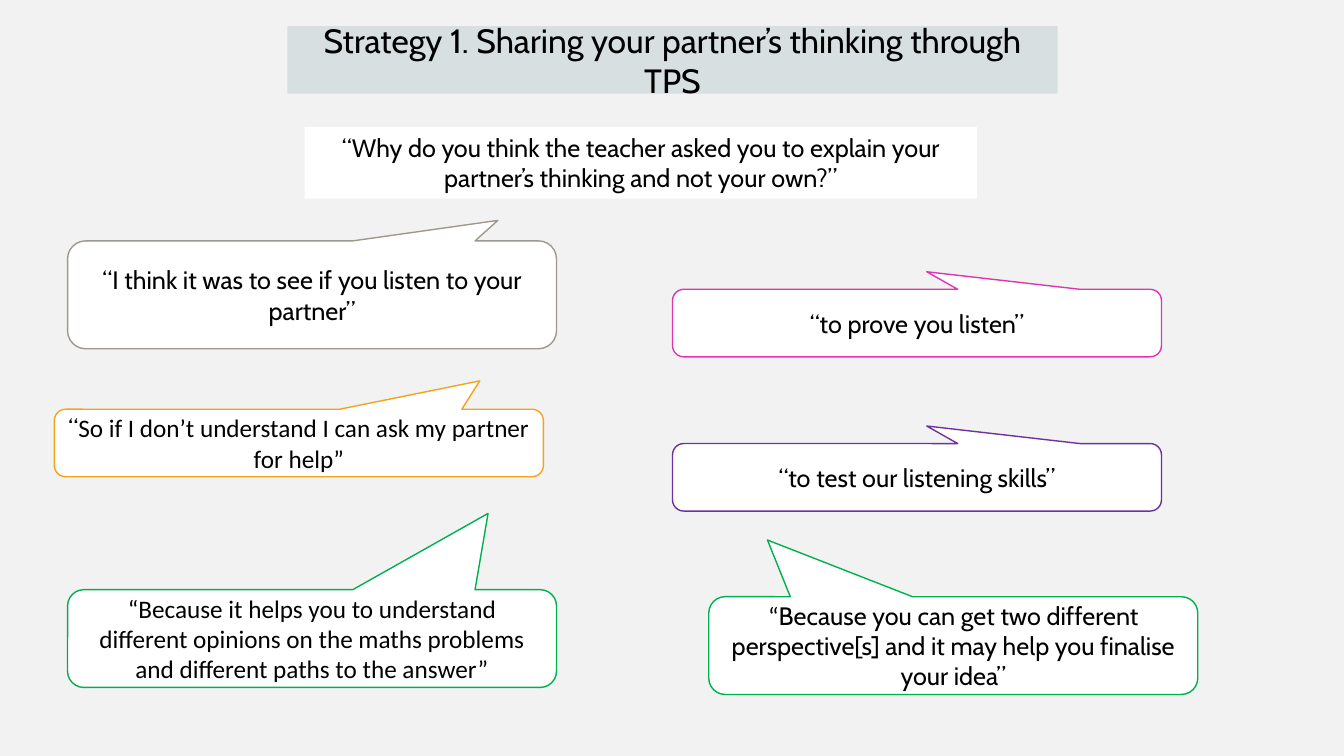
import pptx
import pptx.util
import pptx.dml.color
import pptx.enum.shapes
import pptx.enum.text

RGBColor = pptx.dml.color.RGBColor
BLACK = RGBColor(0x00, 0x00, 0x00)
WHITE = RGBColor(0xFF, 0xFF, 0xFF)
BACKGROUND = RGBColor(0xF2, 0xF2, 0xF2)
BANNER = RGBColor(0xD7, 0xDF, 0xE1)
TAUPE = RGBColor(0xA0, 0x98, 0x8C)
PINK = RGBColor(0xDF, 0x35, 0xB2)
ORANGE = RGBColor(0xF6, 0xA2, 0x1D)
PURPLE = RGBColor(0x70, 0x30, 0xA0)
GREEN = RGBColor(0x00, 0xB0, 0x50)

CABIN, CALIBRI = "Cabin", "Calibri"
SLIDE_WIDTH = pptx.util.Inches(13.33)
SLIDE_HEIGHT = pptx.util.Inches(7.5)
COLUMN = SLIDE_WIDTH / 100
ROW = SLIDE_HEIGHT / 100

TITLE_BOX = (21.38, 3.47, 57.31, 8.93)
QUESTION_BOX = (22.66, 16.8, 50.04, 9.47)
BUBBLE_WIDTH = 36.38
LEFT, RIGHT = 5.03, 50.04
SHORT, MEDIUM, TALL = 8.93, 12.93, 14.27

TITLE = "Strategy 1. Sharing your partner’s thinking through TPS"
QUESTION = ("“Why do you think the teacher asked you to explain your "
            "partner’s thinking and not your own?”")

BUBBLES = [
    (LEFT, 31.87, TALL, (0.38, -0.69), TAUPE,
     [("“I think it was to see if you listen to your partner”", CABIN)]),
    (RIGHT, 38.27, SHORT, (0.02, -0.76), PINK,
     [("“to prove you listen”", CABIN)]),
    (LEFT - 0.98, 54.13, SHORT, (0.37, -0.92), ORANGE,
     [("“", CABIN),
      ("So if I don’t understand I can ask my partner for help”", CALIBRI)]),
    (RIGHT, 58.67, SHORT, (0.02, -0.76), PURPLE,
     [("“to test our listening skills”", CABIN)]),
    (LEFT, 78, MEDIUM, (0.36, -1.28), GREEN,
     [("“Because it helps you to understand different opinions on the maths "
       "problems and different paths to the answer”", CALIBRI)]),
    (RIGHT + 2.7, 78.93, MEDIUM, (-0.38, -1.08), GREEN,
     [("“", CALIBRI),
      ("Because you can get two different perspective[s] and it may help you "
       "finalise your idea”", CABIN)]),
]


def place(box):
    """Turn a box in columns and rows into slide lengths."""
    left, top, width, height = box
    return (round(left * COLUMN), round(top * ROW),
            round(width * COLUMN), round(height * ROW))


def write(shape, pieces, size, anchor, fit=pptx.enum.text.MSO_AUTO_SIZE.NONE):
    """Write one centred paragraph made of (text, font) pieces."""
    frame = shape.text_frame
    frame.word_wrap = True
    frame.auto_size = fit
    frame.vertical_anchor = anchor
    para = frame.paragraphs[0]
    para.alignment = pptx.enum.text.PP_ALIGN.CENTER
    for text, font in pieces:
        span = para.add_run()
        span.text = text
        span.font.name = font
        span.font.size = pptx.util.Pt(size)
        span.font.color.rgb = BLACK


def paint(shape, color):
    """Fill a shape with one colour."""
    shape.fill.solid()
    shape.fill.fore_color.rgb = color


def add_title(page, box):
    """Set the title banner in the title placeholder."""
    title = page.shapes.title
    title.left, title.top, title.width, title.height = place(box)
    paint(title, BANNER)
    write(title, [(TITLE, CABIN)], 24, pptx.enum.text.MSO_ANCHOR.MIDDLE)


def add_question(page, box):
    """Add the white panel with the teacher's question."""
    panel = page.shapes.add_textbox(*place(box))
    paint(panel, WHITE)
    write(panel, [(QUESTION, CABIN)], 18, pptx.enum.text.MSO_ANCHOR.TOP,
          pptx.enum.text.MSO_AUTO_SIZE.SHAPE_TO_FIT_TEXT)


def add_bubble(page, box, tip, color, pieces):
    """Add one answer in a speech bubble whose tail ends at tip."""
    bubble = page.shapes.add_shape(
        pptx.enum.shapes.MSO_SHAPE.ROUNDED_RECTANGULAR_CALLOUT, *place(box))
    bubble.adjustments[0], bubble.adjustments[1] = tip
    bubble.shadow.inherit = False
    paint(bubble, WHITE)
    bubble.line.color.rgb = color
    bubble.line.width = pptx.util.Pt(1)
    write(bubble, pieces, 18, pptx.enum.text.MSO_ANCHOR.MIDDLE)


def main():
    """Build and save the slide."""
    deck = pptx.Presentation()
    deck.slide_width, deck.slide_height = SLIDE_WIDTH, SLIDE_HEIGHT
    page = deck.slides.add_slide(deck.slide_layouts.get_by_name("Title Only"))
    page.background.fill.solid()
    page.background.fill.fore_color.rgb = BACKGROUND
    add_title(page, TITLE_BOX)
    for left, top, height, tip, color, pieces in BUBBLES:
        add_bubble(page, (left, top, BUBBLE_WIDTH, height), tip, color, pieces)
    add_question(page, QUESTION_BOX)
    deck.save("out.pptx")


if __name__ == "__main__":
    main()
